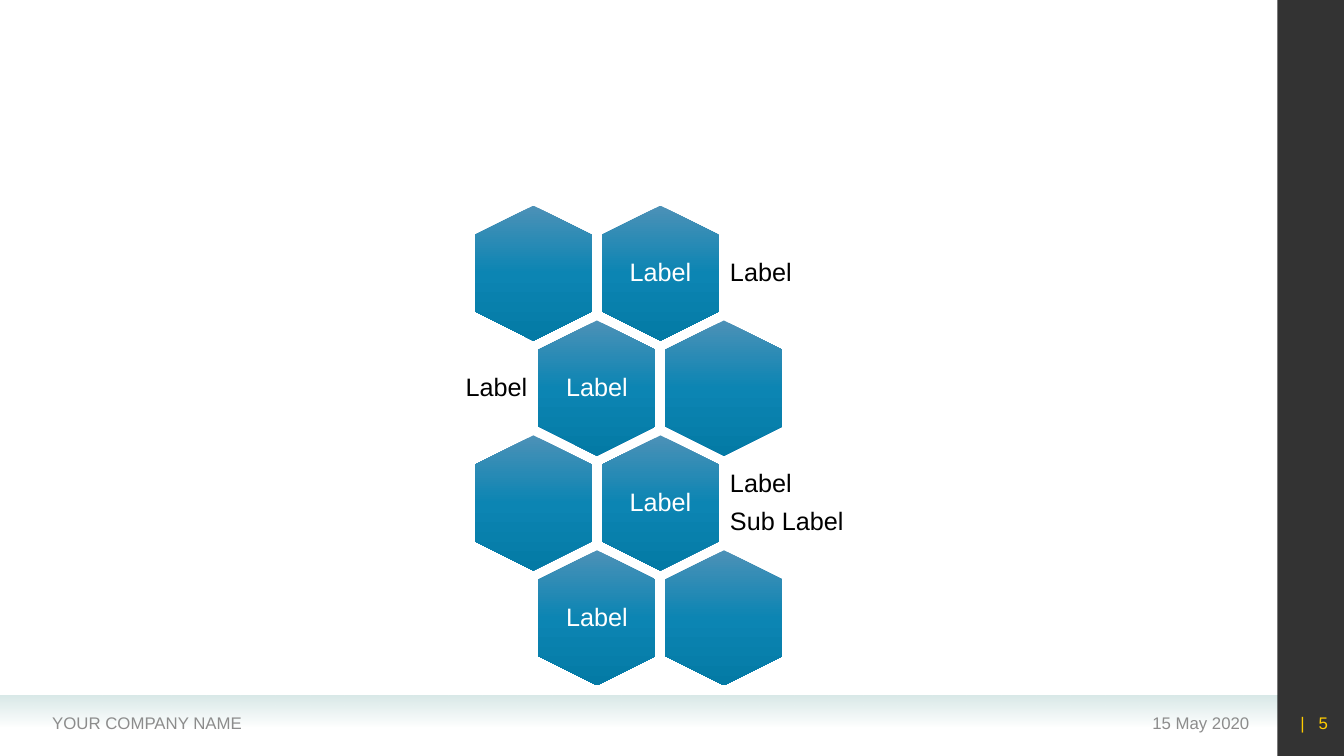
import lxml.etree
import pptx
import pptx.dml.color
import pptx.enum.shapes
import pptx.enum.text
import pptx.oxml.ns
import pptx.util
from dataclasses import dataclass

Inches = pptx.util.Inches
Align = pptx.enum.text.PP_ALIGN
Shape = pptx.enum.shapes.MSO_SHAPE
qn = pptx.oxml.ns.qn

# Each row: the text in its two hexagons, then the side label's side and lines
ROWS = [
    (("", "Label"), "right", ["Label"]),
    (("Label", ""), "left", ["Label"]),
    (("", "Label"), "right", ["Label", "Sub Label"]),
    (("Label", ""), None, []),
]


@dataclass(frozen=True)
class Theme:
    font: str = "Arial"
    label_size: int = 18
    footer_size: int = 12
    white: str = "FFFFFF"
    black: str = "000000"
    grey: str = "8C8C8C"
    yellow: str = "FFCC00"
    # Gradient stops: position %, colour, opacity %
    hexagon: tuple = ((0, "4C91B7", 100), (50, "0C85B3", 100), (100, "047AA5", 100))
    footer: tuple = ((0, "D9E9E8", 100), (100, "D9E9E8", 0))


THEME = Theme()

FOOTER_TEXTS = [
    ("15 May 2020", 9.1, 3.39, Align.RIGHT, THEME.grey),
    ("YOUR COMPANY NAME", 0.42, 4.9, Align.LEFT, THEME.grey),
    ("|   5", 12.6, 0.67, Align.RIGHT, THEME.yellow),
]

HEX_W, HEX_H = 1.34, 1.16
GRID_LEFT, GRID_TOP = 4.62, 2.13
COL_STEP, ROW_STEP = 1.26, 1.14
INNER_W, INNER_H = 0.8, 0.92
SIDE_W, SIDE_H, SIDE_GAP = 1.49, 0.8, 0.62


def set_opacity(color_element, percent):
    alpha = lxml.etree.SubElement(color_element, qn("a:alpha"))
    alpha.set("val", str(percent * 1000))


def fill_downward(sp, stops):
    """Fill top to bottom, whatever the rotation of the shape."""
    sp.fill.gradient()
    grad = sp._element.spPr.find(qn("a:gradFill"))
    grad.set("rotWithShape", "0")
    grad.find(qn("a:lin")).set("ang", "5400000")
    stop_list = grad.find(qn("a:gsLst"))
    stop_list.clear()
    for position, color, opacity in stops:
        gs = lxml.etree.SubElement(stop_list, qn("a:gs"), pos=str(position * 1000))
        set_opacity(lxml.etree.SubElement(gs, qn("a:srgbClr"), val=color), opacity)


def add_plain_shape(shapes, kind, left, top, width, height):
    sp = shapes.add_shape(kind, Inches(left), Inches(top), Inches(width), Inches(height))
    sp.shadow.inherit = False
    sp.line.fill.background()
    return sp


def add_text(shapes, lines, left, top, width, height, align, color, size, inset=None):
    box = shapes.add_textbox(Inches(left), Inches(top), Inches(width), Inches(height))
    tf = box.text_frame
    tf.word_wrap = True
    tf.vertical_anchor = pptx.enum.text.MSO_ANCHOR.MIDDLE
    if inset is not None:
        tf.margin_left = tf.margin_right = tf.margin_top = tf.margin_bottom = Inches(inset)
    tf.text = "\n".join(lines)
    for p in tf.paragraphs:
        p.alignment = align
        p.font.name = THEME.font
        p.font.size = pptx.util.Pt(size)
        p.font.color.rgb = pptx.dml.color.RGBColor.from_string(color)
    return tf


def add_label(shapes, lines, center_x, center_y, width, height, align, color):
    tf = add_text(shapes, lines, center_x - width / 2, center_y - height / 2,
                  width, height, align, color, THEME.label_size, inset=0.07)
    for p in tf.paragraphs:
        p.line_spacing = 0.9
        p.space_after = pptx.util.Pt(7.5)


def add_frame(s):
    band = add_plain_shape(s.shapes, Shape.RECTANGLE, 0, 6.9, 12.67, 0.31)
    fill_downward(band, THEME.footer)
    bar = add_plain_shape(s.shapes, Shape.RECTANGLE, 12.67, 0, 0.67, 7.5)
    bar.fill.solid()
    bar.fill.fore_color.rgb = pptx.dml.color.RGBColor.from_string(THEME.black)
    set_opacity(bar._element.spPr.find(qn("a:solidFill"))[0], 80)
    for text, left, width, align, color in FOOTER_TEXTS:
        add_text(s.shapes, [text], left, 6.97, width, 0.4, align, color, THEME.footer_size)


def add_honeycomb(s):
    shapes = s.shapes.add_group_shape().shapes
    for row, (texts, side, side_lines) in enumerate(ROWS):
        top = GRID_TOP + row * ROW_STEP
        center_y = top + HEX_H / 2
        for col, text in enumerate(texts):
            left = GRID_LEFT + (col + row % 2 / 2) * COL_STEP
            center_x = left + HEX_W / 2
            sp = add_plain_shape(shapes, Shape.HEXAGON, left, top, HEX_W, HEX_H)
            sp.rotation = 90
            fill_downward(sp, THEME.hexagon)
            if not text:
                continue
            add_label(shapes, [text], center_x, center_y, INNER_W, INNER_H,
                      Align.CENTER, THEME.white)
            if side:
                offset = SIDE_GAP + SIDE_W / 2
                side_x = center_x + (offset if side == "right" else -offset)
                align = Align.LEFT if side == "right" else Align.RIGHT
                add_label(shapes, side_lines, side_x, center_y, SIDE_W, SIDE_H,
                          align, THEME.black)


def main():
    prs = pptx.Presentation()
    prs.slide_width, prs.slide_height = Inches(13.33), Inches(7.5)
    s = prs.slides.add_slide(prs.slide_layouts[6])
    add_frame(s)
    add_honeycomb(s)
    prs.save("out.pptx")


if __name__ == "__main__":
    main()
